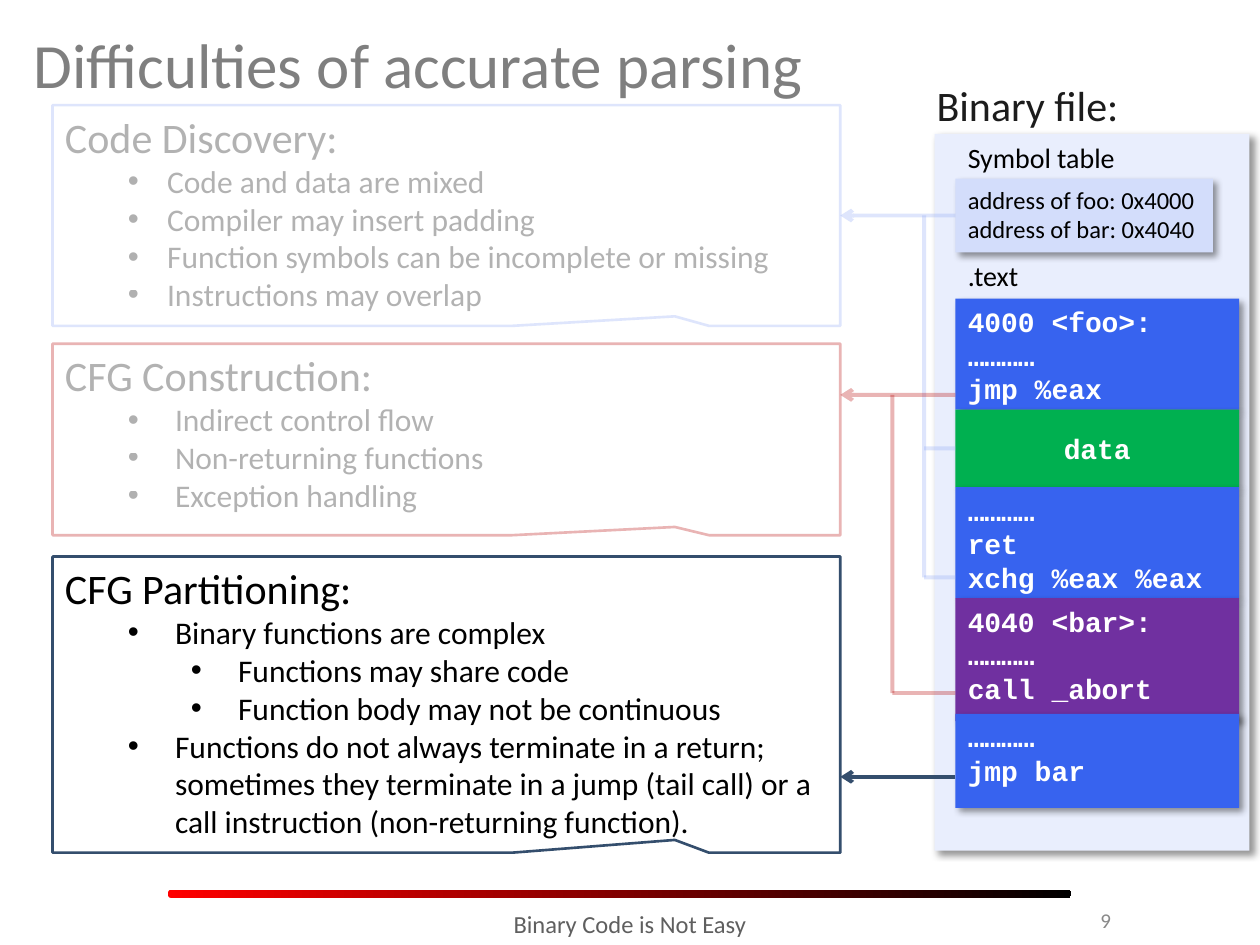
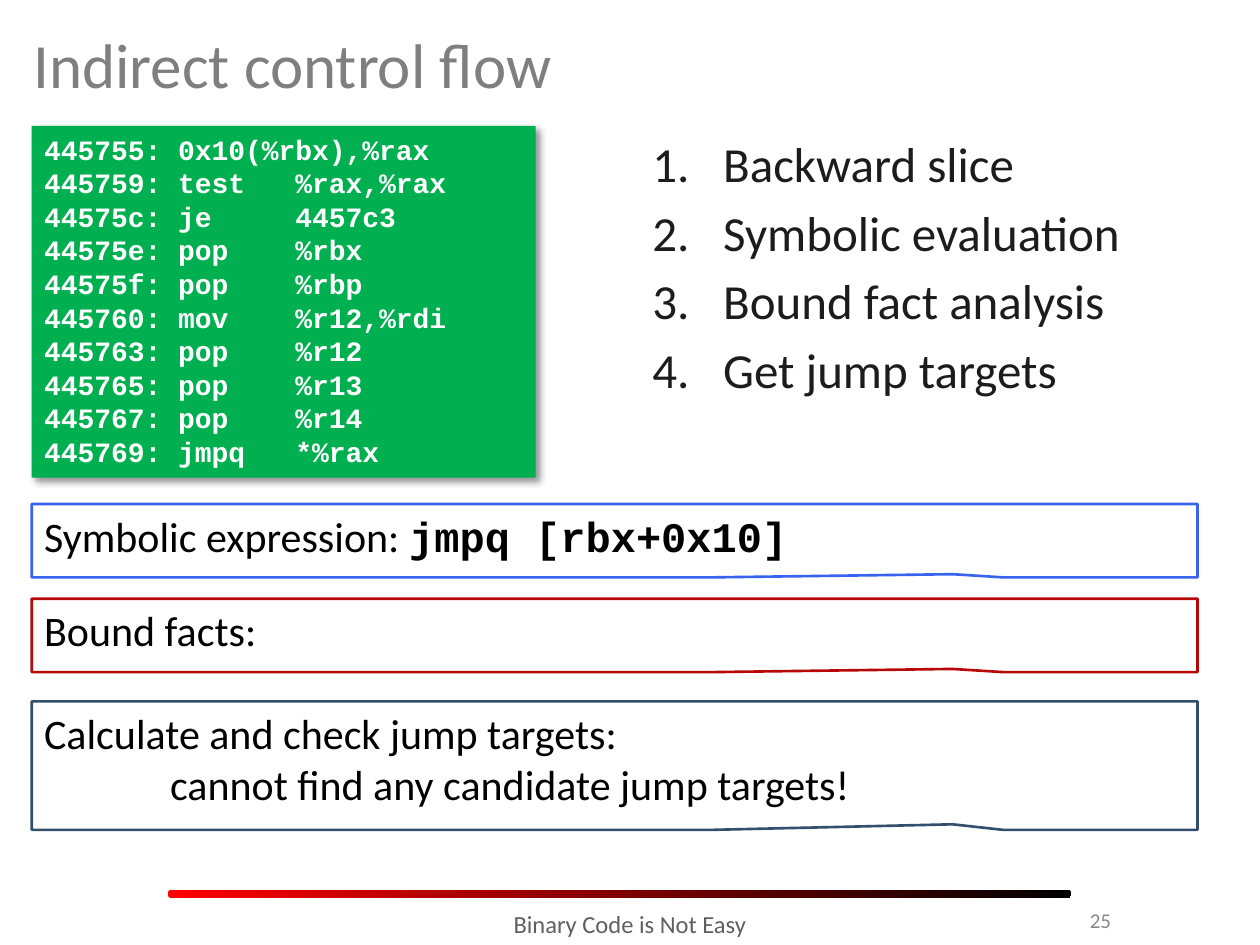
from dataclasses import dataclass

import pptx
import pptx.util
from lxml import etree
from pptx.dml.color import RGBColor
from pptx.enum.shapes import MSO_CONNECTOR, MSO_SHAPE
from pptx.enum.text import MSO_ANCHOR, MSO_AUTO_SIZE, PP_ALIGN
from pptx.oxml.ns import qn
from pptx.util import Cm

# Colours
WHITE = RGBColor(0xFF, 0xFF, 0xFF)
BLACK = RGBColor(0x00, 0x00, 0x00)
INK = RGBColor(0x1C, 0x1C, 0x1C)
TITLE_GREY = RGBColor(0x7F, 0x7F, 0x7F)
FOOTER_GREY = RGBColor(0x5F, 0x5F, 0x5F)
NUMBER_GREY = RGBColor(0x89, 0x89, 0x89)
BAND_RED = RGBColor(0xFF, 0x00, 0x00)
PANEL = RGBColor(0xE9, 0xEE, 0xFD)
SYMBOLS = RGBColor(0xD3, 0xDD, 0xFB)
BLUE = RGBColor(0x37, 0x63, 0xEF)
PALE_BLUE = RGBColor(0x92, 0xAA, 0xF6)
GREEN = RGBColor(0x00, 0xB0, 0x50)
PURPLE = RGBColor(0x70, 0x30, 0xA0)
RED = RGBColor(0xB7, 0x07, 0x07)
NAVY = RGBColor(0x34, 0x4E, 0x6D)

BODY_FONT, CODE_FONT = "Calibri", "Courier New"
FADED = 30  # opacity in percent of the parts not under discussion


@dataclass
class Line:
    """One paragraph with its size and list settings (lengths in cm)."""
    text: str
    size: int
    left: float = 0
    hang: float = 0
    level: int = 0
    bullet: str = ""
    before: float = 0


def bullets(texts, left=2.22, hang=0.95, level=1):
    return [Line(text, 18, left, hang, level, "•") for text in texts]


def set_opacity(element, percent):
    for colour in element.iter(qn("a:srgbClr")):
        etree.SubElement(colour, qn("a:alpha")).set("val", str(percent * 1000))


class Deck:
    def __init__(self):
        self.presentation = pptx.Presentation()
        self.presentation.slide_width = Cm(25.4)
        self.presentation.slide_height = Cm(19.05)
        self.slide = None

    def new_slide(self, title, number):
        """Start a slide with its title, gradient band and footer."""
        self.slide = self.presentation.slides.add_slide(
            self.presentation.slide_layouts[5])
        heading = self.slide.shapes.title
        heading.left, heading.top = Cm(0.42), Cm(0.21)
        heading.width, heading.height = Cm(24.55), Cm(2.12)
        self.fill_text(heading, [Line(title, 36)], TITLE_GREY,
                       anchor=MSO_ANCHOR.MIDDLE)

        band = self.shape(MSO_SHAPE.ROUNDED_RECTANGLE, 3.39, 17.94, 18.2, 0.16)
        band.adjustments[0] = 0.33
        band.fill.gradient()
        band.fill.gradient_angle = 0
        for stop, colour in zip(band.fill.gradient_stops, (BAND_RED, BLACK)):
            stop.color.rgb = colour

        self.text(6.14, 18.2, 13.12, 1.02, [Line("Binary Code is Not Easy", 14)],
                  FOOTER_GREY, align=PP_ALIGN.CENTER)
        self.text(19.26, 18.03, 3.39, 1.02, [Line(number, 12)], NUMBER_GREY,
                  align=PP_ALIGN.RIGHT, anchor=MSO_ANCHOR.MIDDLE)

    def shape(self, kind, left, top, width, height, fill=None):
        shape = self.slide.shapes.add_shape(
            kind, Cm(left), Cm(top), Cm(width), Cm(height))
        shape.shadow.inherit = False
        shape.line.fill.background()
        if fill is not None:
            shape.fill.solid()
            shape.fill.fore_color.rgb = fill
        return shape

    def fill_text(self, shape, lines, colour, font=BODY_FONT, bold=False,
                  align=PP_ALIGN.LEFT, anchor=MSO_ANCHOR.TOP, opacity=100):
        frame = shape.text_frame
        frame.word_wrap = True
        frame.auto_size = MSO_AUTO_SIZE.NONE
        frame.vertical_anchor = anchor
        frame.text = "\n".join(line.text for line in lines)
        for paragraph, line in zip(frame.paragraphs, lines):
            paragraph.alignment = align
            paragraph.level = line.level
            self.indent(paragraph, line)
            if line.before:
                paragraph.space_before = pptx.util.Pt(line.before)
            for run in paragraph.runs:
                self.style_run(run, line.size, colour, font, bold)
                if opacity < 100:
                    set_opacity(run._r, opacity)

    def indent(self, paragraph, line):
        properties = paragraph._p.get_or_add_pPr()
        properties.set("marL", str(Cm(line.left)))
        properties.set("indent", str(-Cm(line.hang)))
        if line.bullet == "1.":
            number = etree.SubElement(properties, qn("a:buAutoNum"))
            number.set("type", "arabicPeriod")
        elif line.bullet:
            etree.SubElement(properties, qn("a:buFont")).set("typeface", "Arial")
            etree.SubElement(properties, qn("a:buChar")).set("char", line.bullet)

    def style_run(self, run, size, colour, font, bold):
        run.font.size = pptx.util.Pt(size)
        run.font.name = font
        run.font.bold = bold
        run.font.color.rgb = colour

    def text(self, left, top, width, height, lines, colour=BLACK, **style):
        box = self.slide.shapes.add_textbox(
            Cm(left), Cm(top), Cm(width), Cm(height))
        self.fill_text(box, lines, colour, **style)

    def card(self, left, top, width, height, fill):
        """A flat rectangle with a soft shadow to the lower right."""
        card = self.shape(MSO_SHAPE.RECTANGLE, left, top, width, height, fill)
        effects = card._element.spPr.find(qn("a:effectLst"))
        shadow = etree.SubElement(effects, qn("a:outerShdw"))
        for key, value in (("blurRad", pptx.util.Pt(4)), ("dist", pptx.util.Pt(3)),
                           ("dir", 45 * 60000), ("algn", "tl"), ("rotWithShape", 0)):
            shadow.set(key, str(value))
        etree.SubElement(shadow, qn("a:srgbClr")).set("val", str(BLACK))
        set_opacity(shadow, 42)
        return card

    def code(self, left, top, width, height, fill, lines, **style):
        block = self.card(left, top, width, height, fill)
        self.fill_text(block, [Line(line, 16) for line in lines], WHITE,
                       font=CODE_FONT, bold=True, **style)
        return block

    def callout(self, left, top, width, height, colour, lines, opacity=100):
        callout = self.shape(MSO_SHAPE.RECTANGULAR_CALLOUT,
                             left, top, width, height, WHITE)
        callout.adjustments[0], callout.adjustments[1] = 0.29, 0.457
        self.outline(callout, colour, 1.5, opacity)
        self.fill_text(callout, lines, BLACK, opacity=opacity)
        return callout

    def outline(self, shape, colour, width, opacity):
        shape.line.color.rgb = colour
        shape.line.width = pptx.util.Pt(width)
        line = shape._element.spPr.find(qn("a:ln"))
        if opacity < 100:
            set_opacity(line, opacity)
        return line

    def connector(self, x1, y1, x2, y2, colour, opacity=100, arrow=False):
        connector = self.slide.shapes.add_connector(
            MSO_CONNECTOR.STRAIGHT, Cm(x1), Cm(y1), Cm(x2), Cm(y2))
        line = self.outline(connector, colour, 2.25, opacity)
        if arrow:
            etree.SubElement(line, qn("a:tailEnd")).set("type", "arrow")
        etree.SubElement(connector._element.spPr, qn("a:effectLst"))
        return connector


def difficulties_slide(deck):
    deck.new_slide("Difficulties of accurate parsing", "9")

    # Binary file panel
    block_left, block_width = 19.26, 5.72
    deck.card(18.84, 2.7, 6.35, 14.45, PANEL)
    symbols = deck.card(block_left, 3.6, 5.19, 1.49, SYMBOLS)
    deck.fill_text(symbols, [Line("address of foo: 0x4000", 14),
                             Line("address of bar: 0x4040", 14)], BLACK)
    deck.text(block_left, 5.08, 1.83, 0.94, [Line(".text", 16)])
    deck.text(block_left, 2.7, 3.6, 0.94, [Line("Symbol table", 16)])
    deck.text(18.63, 1.47, 4.24, 1.27, [Line("Binary file:", 24)], INK)

    # Contents of the text section
    dots = "…………"
    deck.code(block_left, 6.02, block_width, 2.24, BLUE,
              ["4000 <foo>:", dots, "jmp %eax"])
    data = deck.code(block_left, 8.26, block_width, 1.56, GREEN, ["data"],
                     align=PP_ALIGN.CENTER, anchor=MSO_ANCHOR.MIDDLE)
    deck.code(block_left, 9.82, block_width, 2.24, BLUE,
              [dots, "ret", "xchg %eax %eax"])
    deck.code(block_left, 12.06, block_width, 2.48, PURPLE,
              ["4040 <bar>:", dots, "call _abort"])
    deck.code(block_left, 14.39, block_width, 1.9, BLUE, [dots, "jmp bar"])

    # Code discovery, linked to the symbols, the data and the padding
    callout_left, callout_width = 1.06, 15.88
    callout_right = callout_left + callout_width
    discovery = deck.callout(
        callout_left, 2.12, callout_width, 4.45, PALE_BLUE,
        [Line("Code Discovery:", 24)] + bullets(
            ["Code and data are mixed", "Compiler may insert padding",
             "Function symbols can be incomplete or missing",
             "Instructions may overlap"], 2.06, 0.79), FADED)
    spine = 18.63
    data_link = deck.connector(block_left, 9.04, spine, 9.04, PALE_BLUE, FADED)
    data_link.begin_connect(data, 1)
    deck.connector(block_left, 11.64, spine, 11.64, PALE_BLUE, FADED)
    deck.connector(spine, 4.34, spine, 11.64, PALE_BLUE, FADED)
    symbols_link = deck.connector(block_left, 4.34, callout_right, 4.34,
                                  PALE_BLUE, FADED, arrow=True)
    symbols_link.begin_connect(symbols, 1)
    symbols_link.end_connect(discovery, 3)

    # CFG construction, linked to the indirect jump and the abort call
    deck.callout(callout_left, 6.93, callout_width, 3.86, RED,
                 [Line("CFG Construction:", 24)] + bullets(
                     ["Indirect control flow", "Non-returning functions",
                      "Exception handling"]), FADED)
    spine = 17.99
    deck.connector(block_left, 13.97, spine, 13.97, RED, FADED)
    deck.connector(spine, 7.96, spine, 13.97, RED, FADED)
    deck.connector(block_left, 7.96, callout_right, 7.96, RED, FADED, arrow=True)

    # CFG partitioning, linked to the tail call
    deck.callout(
        callout_left, 11.22, callout_width, 5.97, NAVY,
        [Line("CFG Partitioning:", 24)]
        + bullets(["Binary functions are complex"])
        + bullets(["Functions may share code",
                   "Function body may not be continuous"], left=3.49, level=2)
        + bullets(["Functions do not always terminate in a return; sometimes "
                   "they terminate in a jump (tail call) or a call instruction "
                   "(non-returning function)."]))
    deck.connector(block_left, 15.66, callout_right, 15.66, NAVY, arrow=True)


def control_flow_slide(deck):
    deck.new_slide("Indirect control flow", "25")

    # Disassembly
    deck.code(0.64, 2.54, 10.16, 7.09, GREEN, [
        "445755: 0x10(%rbx),%rax",
        "445759: test   %rax,%rax",
        "44575c: je     4457c3",
        "44575e: pop    %rbx",
        "44575f: pop    %rbp",
        "445760: mov    %r12,%rdi",
        "445763: pop    %r12",
        "445765: pop    %r13",
        "445767: pop    %r14",
        "445769: jmpq   *%rax"])

    # Analysis steps
    steps = ["Backward slice", "Symbolic evaluation",
             "Bound fact analysis", "Get jump targets"]
    deck.text(12.9, 2.57, 11.86, 5.72,
              [Line(step, 28, 1.43, 1.43, bullet="1.", before=5.5 if i else 0)
               for i, step in enumerate(steps)], INK)

    # Results of the steps
    left, width = 0.64, 23.5
    expression = deck.callout(left, 10.16, width, 1.48, BLUE,
                              [Line("Symbolic expression: ", 24)])
    jump = expression.text_frame.paragraphs[0].add_run()
    jump.text = "jmpq [rbx+0x10]"
    deck.style_run(jump, 24, BLACK, CODE_FONT, True)
    deck.callout(left, 12.07, width, 1.48, RED, [Line("Bound facts:", 24)])
    deck.callout(left, 14.14, width, 2.59, NAVY,
                 [Line("Calculate and check jump targets:", 24),
                  Line("cannot find any candidate jump targets!", 24, 2.54)])


def main():
    deck = Deck()
    difficulties_slide(deck)
    control_flow_slide(deck)
    deck.presentation.save("out.pptx")


if __name__ == "__main__":
    main()
